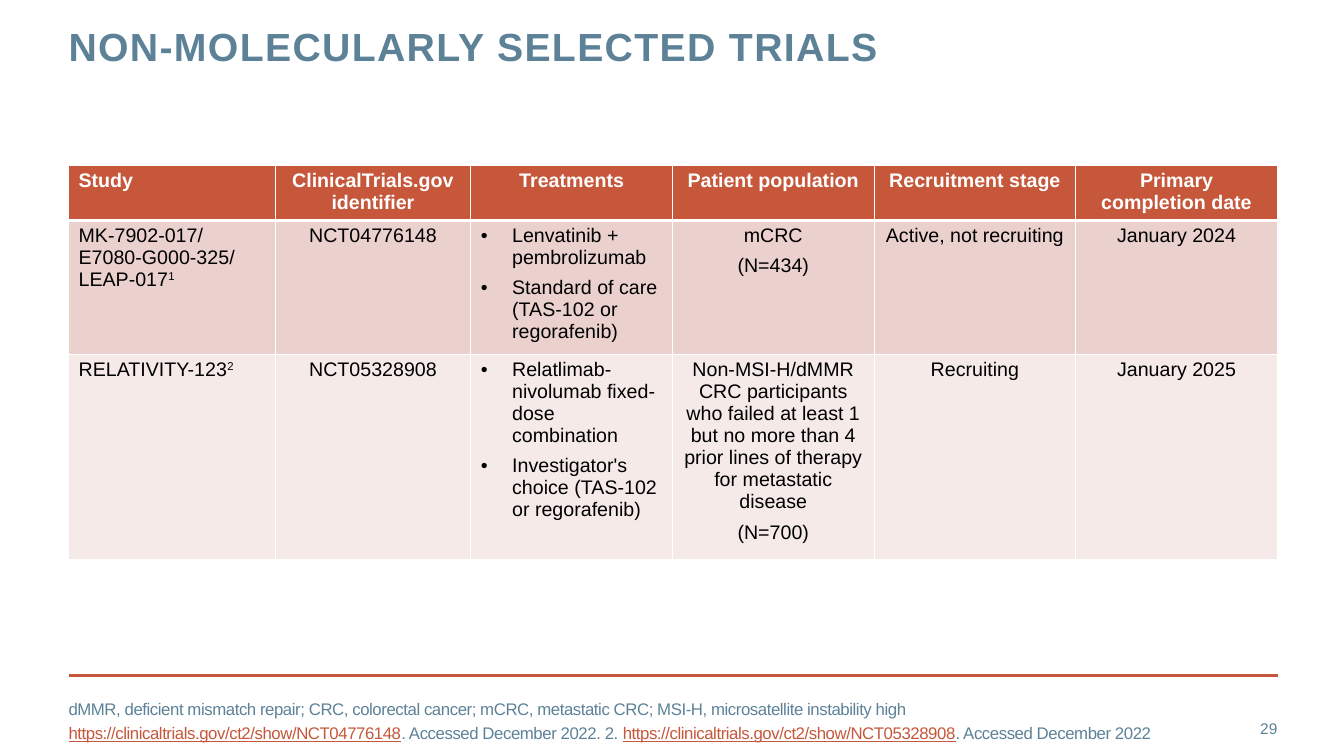
from lxml import etree
from pptx import Presentation
from pptx.dml.color import RGBColor
from pptx.enum.shapes import MSO_CONNECTOR
from pptx.enum.text import MSO_ANCHOR, PP_ALIGN
from pptx.oxml.ns import qn
from pptx.util import Pt

EMU_PER_PX = 9144
FONT = "Arial"
COLORS = {
    "slate": "5D8298",
    "rust": "C6573B",
    "white": "FFFFFF",
    "black": "000000",
    "pink": "EAD1CE",
    "blush": "F5EAE8",
}
LEFT, CENTER, RIGHT = PP_ALIGN.LEFT, PP_ALIGN.CENTER, PP_ALIGN.RIGHT
TOP, MIDDLE = MSO_ANCHOR.TOP, MSO_ANCHOR.MIDDLE
STRAIGHT = MSO_CONNECTOR.STRAIGHT

MARGIN_LEFT = 68
COLUMN_WIDTHS = [205, 194, 200, 200, 200, 200]
ROW_HEIGHTS = [53, 127, 193]
ROW_FILLS = ["rust", "pink", "blush"]
TREATMENTS_COLUMN = 2
BULLET_INDENT = 31
HEADINGS = [
    "Study", "ClinicalTrials.gov identifier", "Treatments",
    "Patient population", "Recruitment stage", "Primary completion date",
]
# Each cell is a list of paragraphs.
TRIALS = [
    [["MK-7902-017/E7080-G000-325/LEAP-017"], ["NCT04776148"],
     ["Lenvatinib + pembrolizumab", "Standard of care (TAS-102 or regorafenib)"],
     ["mCRC", "(N=434)"], ["Active, not recruiting"], ["January 2024"]],
    [["RELATIVITY-123"], ["NCT05328908"],
     ["Relatlimab-nivolumab fixed-dose combination",
      "Investigator's choice (TAS-102 or regorafenib)"],
     ["Non-MSI-H/dMMR CRC participants who failed at least 1 but no more than 4 "
      "prior lines of therapy for metastatic disease", "(N=700)"],
     ["Recruiting"], ["January 2025"]],
]
ABBREVIATIONS = ("dMMR, deficient mismatch repair; CRC, colorectal cancer; "
                 "mCRC, metastatic CRC; MSI-H, microsatellite instability high")
REFERENCES = [
    "https://clinicaltrials.gov/ct2/show/NCT04776148",
    ". Accessed December 2022. 2. ",
    "https://clinicaltrials.gov/ct2/show/NCT05328908",
    ". Accessed December 2022",
]


def px(length):
    return length * EMU_PER_PX


def rgb(name):
    return RGBColor.from_string(COLORS[name])


def add_run(paragraph, text, size, color, bold=False, spacing=0):
    """Append a run; spacing is the character spacing in points."""
    run = paragraph.add_run()
    run.text = text
    run.font.name = FONT
    run.font.size = Pt(size)
    run.font.bold = bold
    run.font.color.rgb = rgb(color)
    if spacing:
        run.font._element.set("spc", str(round(spacing * 100)))
    return run


def add_text_frame(slide, left, top, width, height, anchor):
    box = slide.shapes.add_textbox(px(left), px(top), px(width), px(height))
    frame = box.text_frame
    frame.word_wrap = True
    frame.vertical_anchor = anchor
    frame.margin_left = frame.margin_right = 0
    frame.margin_top = frame.margin_bottom = 0
    return frame


def add_bullet(paragraph):
    properties = paragraph._p.get_or_add_pPr()
    properties.set("marL", str(px(BULLET_INDENT)))
    properties.set("indent", str(-px(BULLET_INDENT)))
    etree.SubElement(properties, qn("a:buFont")).set("typeface", FONT)
    etree.SubElement(properties, qn("a:buChar")).set("char", "•")


def set_borders(cell, top, bottom):
    """Draw white borders, 1 point wide at the sides."""
    properties = cell._tc.get_or_add_tcPr()
    for side, width in (("L", 1), ("R", 1), ("T", top), ("B", bottom)):
        line = etree.SubElement(properties, qn(f"a:ln{side}"), w=str(Pt(width)))
        fill = etree.SubElement(line, qn("a:solidFill"))
        etree.SubElement(fill, qn("a:srgbClr"), val=COLORS["white"])


def fill_cell(cell, texts, row, column):
    is_header = row == 0
    set_borders(cell, top=3 if row == 1 else 1, bottom=3 if is_header else 1)
    cell.fill.solid()
    cell.fill.fore_color.rgb = rgb(ROW_FILLS[row])
    cell.margin_left = cell.margin_right = px(10)
    cell.margin_top = cell.margin_bottom = px(4)
    bulleted = column == TREATMENTS_COLUMN and not is_header
    for index, text in enumerate(texts):
        frame = cell.text_frame
        paragraph = frame.add_paragraph() if index else frame.paragraphs[0]
        if bulleted:
            add_bullet(paragraph)
        paragraph.alignment = LEFT if bulleted or column == 0 else CENTER
        paragraph.space_after = Pt(6)
        color = "white" if is_header else "black"
        add_run(paragraph, text, 14, color, bold=is_header)
    if column == 0 and not is_header:
        reference = add_run(paragraph, str(row), 14, "black")
        reference.font._element.set("baseline", "30000")


def add_trials_table(slide):
    table = slide.shapes.add_table(
        len(ROW_HEIGHTS), len(COLUMN_WIDTHS), px(MARGIN_LEFT), px(164),
        px(sum(COLUMN_WIDTHS)), px(sum(ROW_HEIGHTS))).table
    table.first_row = table.horz_banding = False
    for column, width in zip(table.columns, COLUMN_WIDTHS):
        column.width = px(width)
    for row, height in zip(table.rows, ROW_HEIGHTS):
        row.height = px(height)
    rows = [[[heading] for heading in HEADINGS], *TRIALS]
    for row, cells in enumerate(rows):
        for column, texts in enumerate(cells):
            fill_cell(table.cell(row, column), texts, row, column)


def add_title(slide):
    title = add_text_frame(slide, MARGIN_LEFT, 27, 956, 88, TOP).paragraphs[0]
    title.line_spacing = Pt(30)
    add_run(title, "NON-MOLECULARLY SELECTED TRIALS", 28, "slate", bold=True, spacing=1)


def add_footer_rule(slide):
    rule = slide.shapes.add_connector(STRAIGHT, px(MARGIN_LEFT), px(670), px(1268), px(670))
    rule.line.color.rgb = rgb("rust")
    rule.line.width = Pt(2)
    etree.SubElement(rule._element.spPr, qn("a:effectLst"))


def add_footnotes(slide):
    frame = add_text_frame(slide, MARGIN_LEFT, 695, 1113, 40, MIDDLE)
    add_run(frame.paragraphs[0], ABBREVIATIONS, 12, "slate", spacing=-0.3)
    references = frame.add_paragraph()
    references.space_before = Pt(3)
    for text in REFERENCES:
        is_address = text.startswith("https")
        run = add_run(references, text, 12, "rust" if is_address else "slate", spacing=-0.3)
        run.font.underline = is_address


def add_page_number(slide):
    number = add_text_frame(slide, 1181, 703, 86, 40, MIDDLE).paragraphs[0]
    number.alignment = RIGHT
    add_run(number, "29", 11, "slate")


def main():
    presentation = Presentation()
    presentation.slide_width = px(1333)
    presentation.slide_height = px(750)
    slide = presentation.slides.add_slide(presentation.slide_layouts[6])
    add_footer_rule(slide)
    add_title(slide)
    add_page_number(slide)
    add_footnotes(slide)
    add_trials_table(slide)
    presentation.save("out.pptx")


if __name__ == "__main__":
    main()
